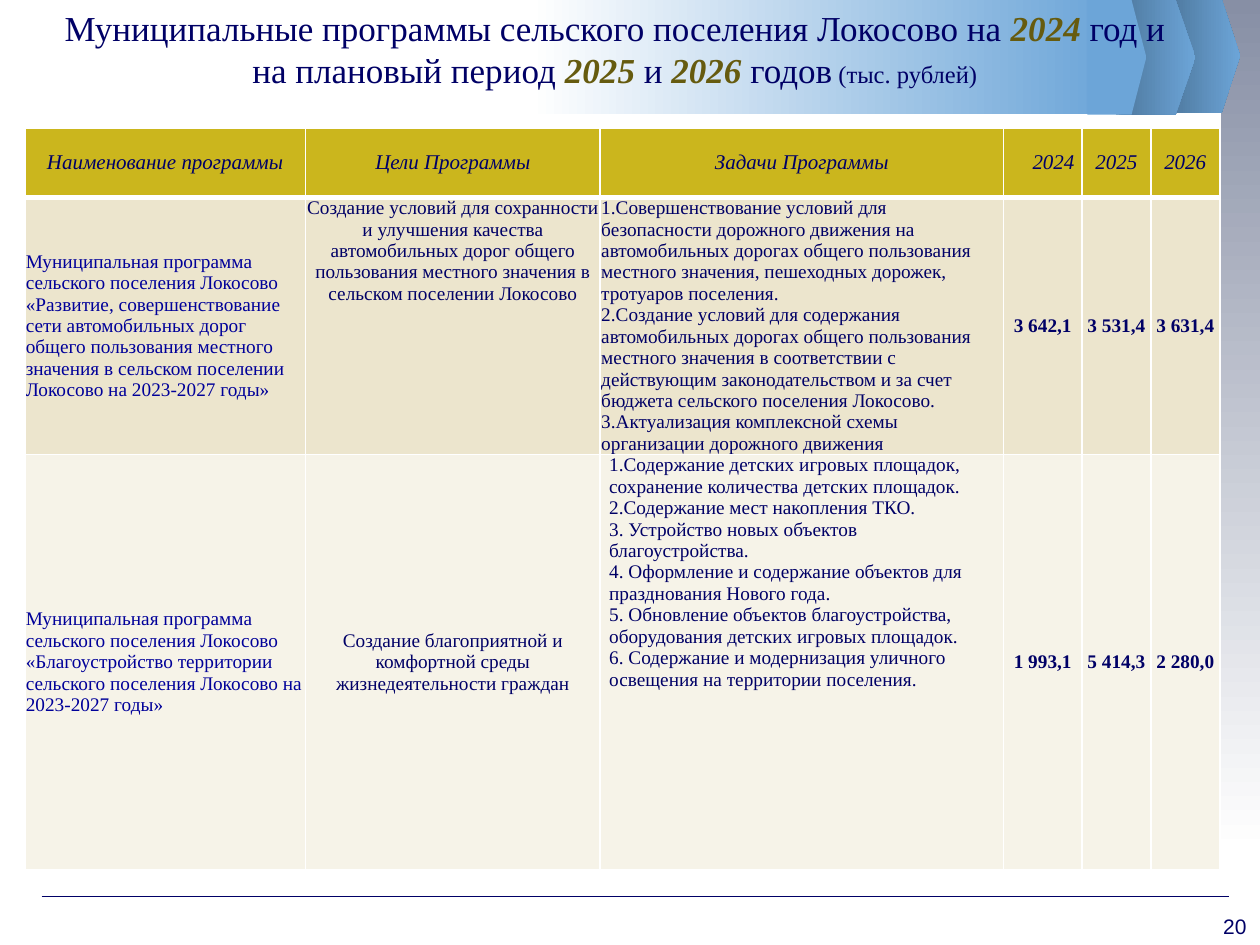
from dataclasses import dataclass

from lxml.etree import SubElement
from pptx import Presentation
from pptx.dml.color import RGBColor
from pptx.enum.shapes import MSO_CONNECTOR, MSO_SHAPE
from pptx.enum.text import MSO_ANCHOR, PP_ALIGN
from pptx.oxml import parse_xml
from pptx.oxml.ns import nsdecls, qn
from pptx.util import Cm, Pt


@dataclass(frozen=True)
class Theme:
    serif: str = "Times New Roman"
    sans: str = "Arial"
    navy: str = "000066"
    blue: str = "000099"
    olive: str = "665B0F"
    white: str = "FFFFFF"
    gray: str = "878FA5"
    steel: str = "4D769B"
    sky: str = "6CA5D8"
    bands: tuple = ("CBB61D", "ECE5CD", "F6F3E8")
    title: int = 20
    unit: int = 14
    header: int = 12
    body: int = 11


THEME = Theme()

TITLE = [
    [("Муниципальные программы сельского поселения Локосово на ", "plain"),
     ("2024", "year"), (" год и", "plain")],
    [("на плановый период ", "plain"), ("2025", "year"), (" и ", "plain"),
     ("2026", "year"), (" годов", "plain"), (" (тыс. рублей)", "unit")],
]
HEADINGS = ["Наименование программы", "Цели Программы", "Задачи Программы",
            "2024", "2025", "2026"]
PROGRAMS = [
    ["Муниципальная программа сельского поселения Локосово «Развитие, "
     "совершенствование сети автомобильных дорог общего пользования местного "
     "значения в сельском поселении Локосово на 2023-2027 годы»",
     "Создание условий для сохранности и улучшения качества автомобильных дорог "
     "общего пользования местного значения в сельском поселении Локосово",
     "1.Совершенствование условий для безопасности дорожного движения на "
     "автомобильных дорогах общего пользования местного значения, пешеходных "
     "дорожек, тротуаров поселения.\n"
     "2.Создание условий для содержания автомобильных дорогах общего пользования "
     "местного значения в соответствии с действующим законодательством и за счет "
     "бюджета сельского поселения Локосово.\n"
     "3.Актуализация комплексной схемы организации дорожного движения",
     "3 642,1", "3 531,4", "3 631,4"],
    ["Муниципальная программа сельского поселения Локосово «Благоустройство "
     "территории сельского поселения Локосово на 2023-2027 годы»",
     "Создание благоприятной и комфортной среды жизнедеятельности граждан",
     "1.Содержание детских игровых площадок, сохранение количества детских площадок.\n"
     "2.Содержание мест накопления ТКО.\n"
     "3. Устройство новых объектов благоустройства.\n"
     "4. Оформление и содержание объектов для празднования Нового года.\n"
     "5. Обновление объектов благоустройства, оборудования детских игровых площадок.\n"
     "6. Содержание и модернизация уличного освещения на территории поселения.",
     "1 993,1", "5 414,3", "2 280,0"],
]
PAGE_NUMBER = "20"

COLUMN_WIDTHS = [5.66, 5.94, 8.13, 1.58, 1.39, 1.39]
ROW_HEIGHTS = [1.4, 4.96, 8.37]
GOAL, TASKS, FIRST_YEAR = 1, 2, 3
TOP_ALIGNED = {(1, GOAL), (1, TASKS), (2, TASKS)}
SIDE_MARGINS = {(0, FIRST_YEAR): 0.15, (2, TASKS): 0.18}

RECT, ARROW = MSO_SHAPE.RECTANGLE, MSO_SHAPE.PENTAGON
DECOR = [
    (RECT, (24.61, 0, 0.79, 17.2), (THEME.gray, THEME.white), 270),
    (ARROW, (23.5, -0.03, 1.5, 2.31), (THEME.steel, THEME.sky), 0),
    (ARROW, (22.5, 0, 1.6, 2.31), (THEME.steel, THEME.sky), 0),
    (RECT, (10.69, 0, 11.68, 2.31), (THEME.white, THEME.sky), 0),
    (ARROW, (21.92, 0, 1.19, 2.31), (THEME.sky, THEME.sky), 0),
]


def rgb(color):
    """Convert a hex string to a colour."""
    return RGBColor.from_string(color)


def style(font, size, color, name=THEME.serif, bold=False, italic=False):
    """Apply type settings to a font."""
    font.name, font.size = name, Pt(size)
    font.bold, font.italic = bold, italic
    font.color.rgb = rgb(color)


def add_decor(slide):
    """Draw the gradient bands, arrows and footer rule."""
    for kind, place, colors, angle in DECOR:
        band = slide.shapes.add_shape(kind, *map(Cm, place))
        band.shadow.inherit = False
        band.line.fill.background()
        if kind == ARROW:
            band.adjustments[0] = 0.25
        band.fill.gradient()
        band.fill.gradient_angle = angle
        for stop, color in zip(band.fill.gradient_stops, colors):
            stop.color.rgb = rgb(color)
    rule = slide.shapes.add_connector(
        MSO_CONNECTOR.STRAIGHT, Cm(0.84), Cm(18.08), Cm(24.77), Cm(18.08))
    rule.line.color.rgb = rgb(THEME.navy)
    rule.line.width = Pt(0.75)
    SubElement(rule._element.spPr, qn("a:effectLst"))


def set_borders(cell, row):
    """Outline a cell in white with a heavy rule under the header."""
    widths = {"L": 1, "R": 1, "T": 3 if row == 1 else 1, "B": 3 if row == 0 else 1}
    properties = cell._tc.get_or_add_tcPr()
    for position, (side, width) in enumerate(widths.items()):
        properties.insert(position, parse_xml(
            f'<a:ln{side} {nsdecls("a")} w="{Pt(width)}"><a:solidFill>'
            f'<a:srgbClr val="{THEME.white}"/></a:solidFill></a:ln{side}>'))


def alignment(row, column):
    """Choose the paragraph alignment of a table cell."""
    if (row, column) == (0, FIRST_YEAR):
        return PP_ALIGN.RIGHT
    return PP_ALIGN.LEFT if row and column in (0, TASKS) else PP_ALIGN.CENTER


def add_programs(slide):
    """Fill the table of programs."""
    rows = [HEADINGS, *PROGRAMS]
    programs = slide.shapes.add_table(
        len(rows), len(HEADINGS), Cm(0.5), Cm(2.58),
        Cm(sum(COLUMN_WIDTHS)), Cm(sum(ROW_HEIGHTS))).table
    programs.horz_banding = False
    for column, width in zip(programs.columns, COLUMN_WIDTHS):
        column.width = Cm(width)
    for r, (texts, height) in enumerate(zip(rows, ROW_HEIGHTS)):
        programs.rows[r].height = Cm(height)
        for c, text in enumerate(texts):
            cell = programs.cell(r, c)
            cell.text = text
            cell.margin_left = cell.margin_right = Cm(SIDE_MARGINS.get((r, c), 0.02))
            cell.margin_top = cell.margin_bottom = 0
            top = (r, c) in TOP_ALIGNED
            cell.vertical_anchor = MSO_ANCHOR.TOP if top else MSO_ANCHOR.MIDDLE
            cell.fill.solid()
            cell.fill.fore_color.rgb = rgb(THEME.bands[r])
            set_borders(cell, r)
            for paragraph in cell.text_frame.paragraphs:
                paragraph.alignment = alignment(r, c)
                for run in paragraph.runs:
                    style(run.font, THEME.body if r else THEME.header,
                          THEME.blue if r and c == 0 else THEME.navy,
                          bold=r > 0 and c >= FIRST_YEAR, italic=r == 0)


def add_title(slide):
    """Write the two-line title."""
    title = slide.shapes.add_textbox(Cm(0.89), 0, Cm(23.01), Cm(1.96)).text_frame
    title.word_wrap = True
    for number, parts in enumerate(TITLE):
        line = title.add_paragraph() if number else title.paragraphs[0]
        line.alignment = PP_ALIGN.CENTER
        for text, role in parts:
            run = line.add_run()
            run.text = text
            year = role == "year"
            style(run.font, THEME.unit if role == "unit" else THEME.title,
                  THEME.olive if year else THEME.navy, bold=year, italic=year)


def add_page_number(slide):
    """Write the page number."""
    number = slide.shapes.add_textbox(Cm(24.41), Cm(18.29), Cm(0.99), Cm(0.76)).text_frame
    number.word_wrap = False
    number.text = PAGE_NUMBER
    style(number.paragraphs[0].runs[0].font, THEME.header, THEME.navy, THEME.sans)


def main():
    """Build and save the slide."""
    deck = Presentation()
    deck.slide_width, deck.slide_height = Cm(25.4), Cm(19.05)
    slide = deck.slides.add_slide(deck.slide_layouts[6])
    for build in (add_decor, add_programs, add_title, add_page_number):
        build(slide)
    deck.save("out.pptx")


if __name__ == "__main__":
    main()
